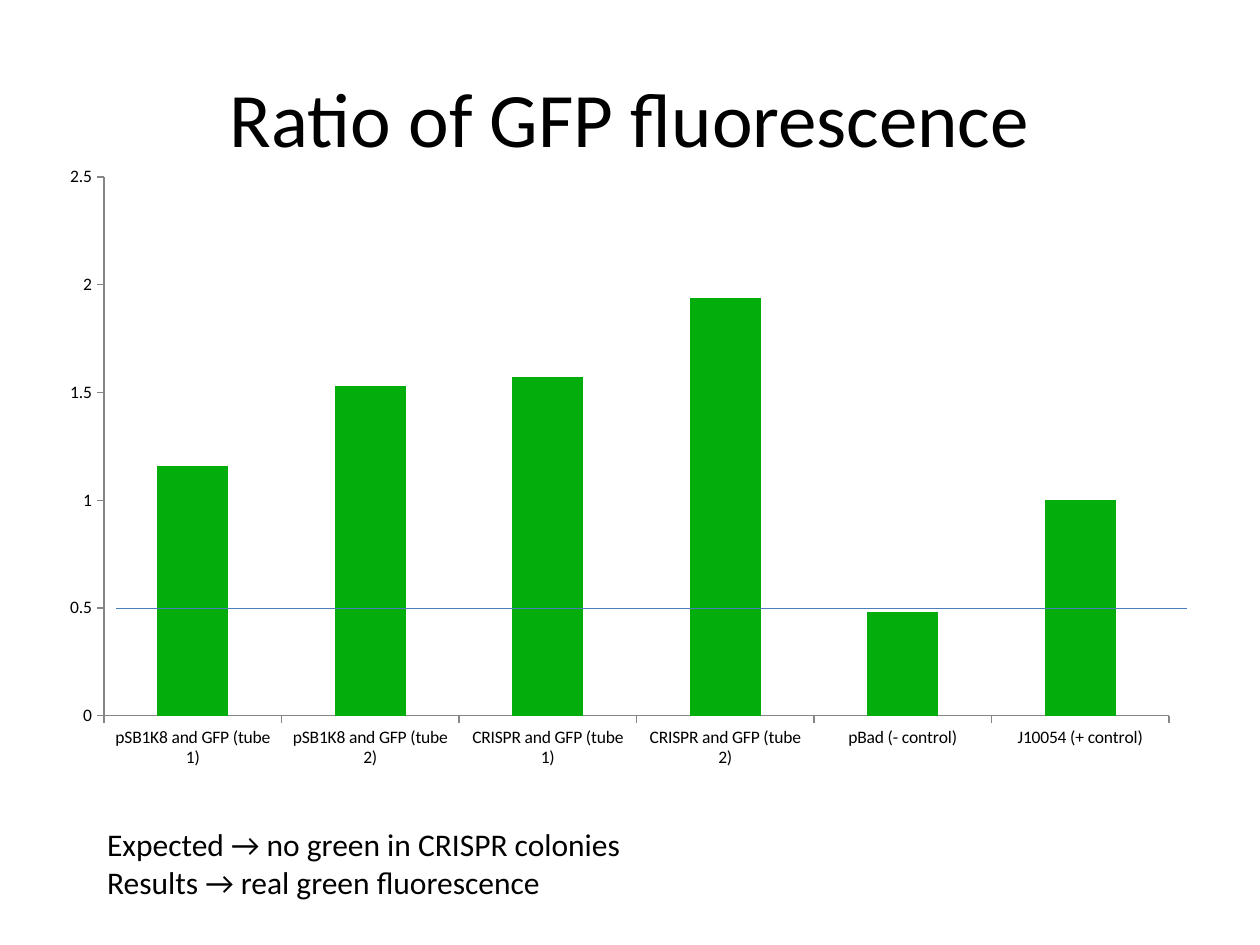
"""Build a slide with a column chart of GFP fluorescence ratios."""
from dataclasses import dataclass

from lxml import etree
from pptx import Presentation
from pptx.chart.data import CategoryChartData
from pptx.dml.color import RGBColor
from pptx.enum.chart import XL_CHART_TYPE, XL_TICK_MARK
from pptx.enum.shapes import MSO_CONNECTOR
from pptx.enum.text import MSO_ANCHOR, PP_ALIGN
from pptx.oxml import parse_xml
from pptx.oxml.ns import nsdecls, qn
from pptx.util import Cm, Pt

COLUMNS = XL_CHART_TYPE.COLUMN_CLUSTERED
OUTSIDE = XL_TICK_MARK.OUTSIDE
STRAIGHT = MSO_CONNECTOR.STRAIGHT
MIDDLE, TOP = MSO_ANCHOR.MIDDLE, MSO_ANCHOR.TOP
CENTER, LEFT = PP_ALIGN.CENTER, PP_ALIGN.LEFT


@dataclass(frozen=True)
class Theme:
    font: str = "Calibri"
    text: RGBColor = RGBColor(0x00, 0x00, 0x00)
    bar: RGBColor = RGBColor(0x03, 0xAD, 0x0B)
    axis: RGBColor = RGBColor(0x86, 0x86, 0x86)
    threshold: RGBColor = RGBColor(0x4B, 0x7E, 0xBC)
    title_size: Pt = Pt(44)
    body_size: Pt = Pt(18)
    chart_size: Pt = Pt(10)
    line_width: Pt = Pt(0.75)


THEME = Theme()

RATIOS = {
    "pSB1K8 and GFP (tube 1)": 1.16,
    "pSB1K8 and GFP (tube 2)": 1.53,
    "CRISPR and GFP (tube 1)": 1.57,
    "CRISPR and GFP (tube 2)": 1.94,
    "pBad (- control)": 0.48,
    "J10054 (+ control)": 1,
}
PLOT_BOX = {"x": 0.045, "y": 0.031, "w": 0.939, "h": 0.864}


def style_font(font, size):
    font.name = THEME.font
    font.size = size
    font.color.rgb = THEME.text


def add_text(slide, box, lines, size, align=LEFT, anchor=TOP):
    tf = slide.shapes.add_textbox(*box).text_frame
    tf.word_wrap = True
    tf.vertical_anchor = anchor
    tf.text = "\n".join(lines)
    for p in tf.paragraphs:
        p.alignment = align
        for r in p.runs:
            style_font(r.font, size)


def set_plot_box(chart):
    plot_area = chart.element.find(".//" + qn("c:plotArea"))
    for old in plot_area.findall(qn("c:layout")):
        plot_area.remove(old)
    sizes = "".join(f'<c:{k} val="{v}"/>' for k, v in PLOT_BOX.items())
    plot_area.insert(0, parse_xml(
        f'<c:layout {nsdecls("c")}><c:manualLayout>'
        '<c:layoutTarget val="inner"/><c:xMode val="edge"/><c:yMode val="edge"/>'
        f'{sizes}</c:manualLayout></c:layout>'))


def style_axis(axis):
    axis.has_major_gridlines = False
    axis.major_tick_mark = OUTSIDE
    axis.format.line.color.rgb = THEME.axis
    axis.format.line.width = THEME.line_width


def add_ratio_chart(slide, box):
    data = CategoryChartData()
    data.categories = list(RATIOS)
    data.add_series("Series 1", list(RATIOS.values()))
    chart = slide.shapes.add_chart(COLUMNS, *box, data).chart
    chart.has_title = False
    chart.has_legend = False
    style_font(chart.font, THEME.chart_size)
    set_plot_box(chart)
    for axis in (chart.category_axis, chart.value_axis):
        style_axis(axis)
    chart.value_axis.minimum_scale = 0
    chart.value_axis.maximum_scale = 2.5
    chart.value_axis.major_unit = 0.5
    plot = chart.plots[0]
    plot.gap_width = 150
    plot.vary_by_categories = False
    fill = plot.series[0].format.fill
    fill.solid()
    fill.fore_color.rgb = THEME.bar


def add_threshold(slide, left, right, y):
    line = slide.shapes.add_connector(STRAIGHT, right, y, left, y)
    line.line.color.rgb = THEME.threshold
    line.line.width = THEME.line_width
    etree.SubElement(line.element.spPr, qn("a:effectLst"))


def main():
    prs = Presentation()
    prs.slide_width, prs.slide_height = Cm(25.4), Cm(19.05)
    slide = prs.slides.add_slide(prs.slide_layouts[6])
    add_text(slide, (Cm(1.27), Cm(0.76), Cm(22.86), Cm(3.18)),
             ["Ratio of GFP fluorescence"], THEME.title_size, CENTER, MIDDLE)
    add_ratio_chart(slide, (Cm(1.07), Cm(3.18), Cm(22.86), Cm(12.57)))
    add_threshold(slide, Cm(2.34), Cm(23.93), Cm(12.27))
    add_text(slide, (Cm(1.91), Cm(16.51), Cm(15.88), Cm(1.8)),
             ["Expected → no green in CRISPR colonies",
              "Results → real green fluorescence"], THEME.body_size)
    prs.save("out.pptx")


if __name__ == "__main__":
    main()
